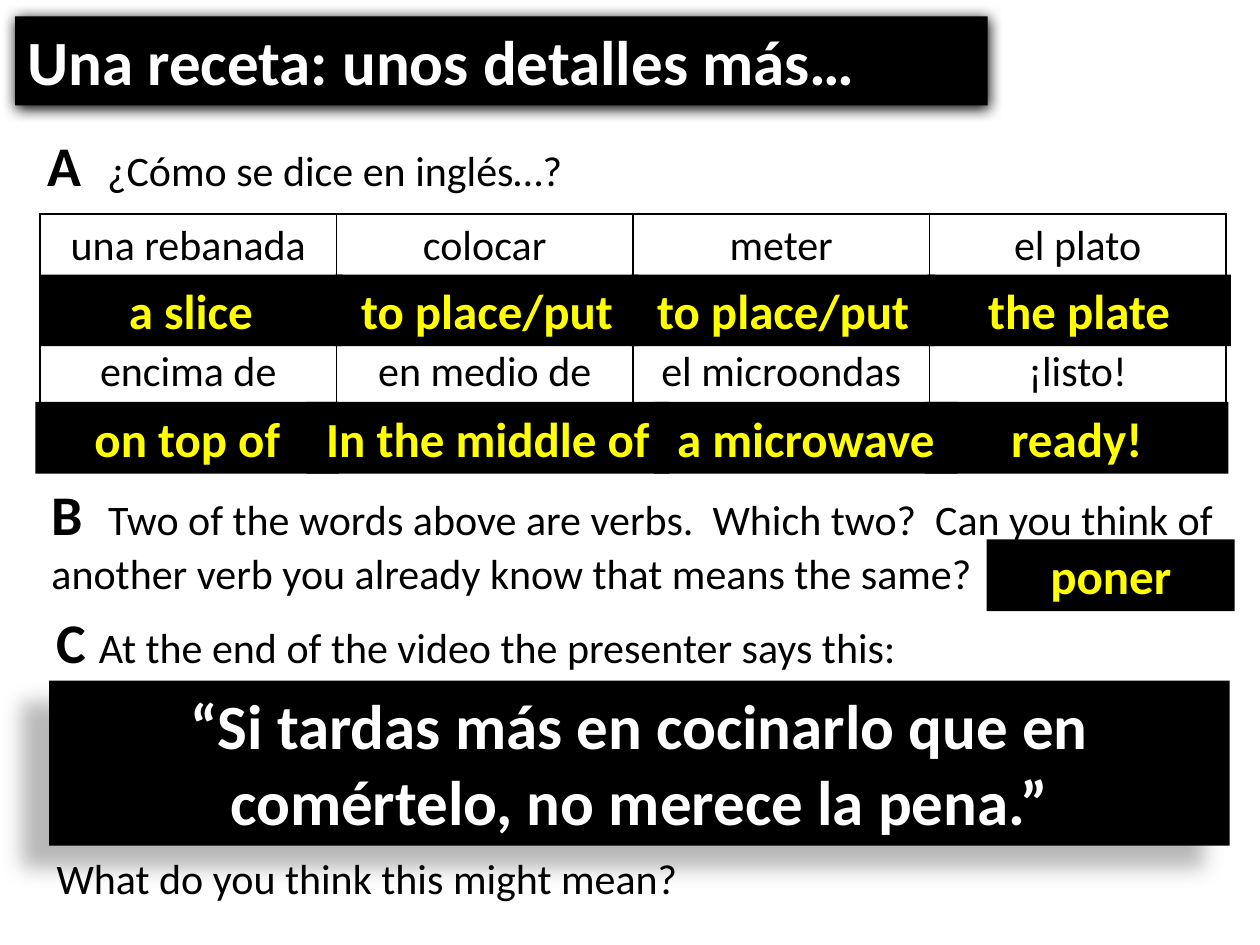
from lxml.etree import SubElement
from pptx import Presentation
from pptx.dml.color import RGBColor
from pptx.enum.shapes import MSO_SHAPE
from pptx.enum.text import MSO_ANCHOR, PP_ALIGN
from pptx.oxml.ns import qn
from pptx.util import Pt

BLACK = RGBColor(0x00, 0x00, 0x00)
WHITE = RGBColor(0xFF, 0xFF, 0xFF)
YELLOW = RGBColor(0xFF, 0xFF, 0x00)

LETTER = {"size": Pt(32), "bold": True, "color": BLACK}
BODY = {"size": Pt(24), "bold": False, "color": BLACK}
HEADLINE = {"size": Pt(36), "bold": True, "color": WHITE}
ANSWER = {"size": Pt(28), "bold": True, "color": YELLOW}

TITLE_SHADOW = {"alpha": 100, "blur": 8.5, "distance": 1, "angle": 90}
QUOTE_SHADOW = {"alpha": 28, "blur": 11.8, "distance": 19.7, "angle": 141}

VOCABULARY = [
    ["una rebanada", "colocar", "meter", "el plato"],
    [""] * 4,
    ["encima de", "en medio de", "el microondas", "¡listo!"],
    [""] * 4,
]
FIRST_ANSWERS = ["a slice", "to place/put", "to place/put", "the plate"]
SECOND_ANSWERS = [
    ("on top of", 20.2, 173.5),
    ("ready!", 528.5, 173.5),
    ("a microwave", 373.7, 173.5),
    ("In the middle of", 175, 207.4),
]


def write(paragraph, text, style):
    """Add a run of text in the given style."""
    run = paragraph.add_run()
    run.text = text
    run.font.name = "Calibri"
    for attribute, value in style.items():
        if attribute == "color":
            run.font.color.rgb = value
        else:
            setattr(run.font, attribute, value)


def add_shadow(panel, alpha, blur, distance, angle):
    """Give a panel an outer black shadow."""
    effects = panel._element.spPr.find(qn("a:effectLst"))
    outer = SubElement(
        effects, qn("a:outerShdw"), blurRad=str(Pt(blur)), dist=str(Pt(distance)),
        dir=str(angle * 60000), algn="ctr", rotWithShape="0")
    color = SubElement(outer, qn("a:srgbClr"), val=str(BLACK))
    SubElement(color, qn("a:alpha"), val=str(alpha * 1000))


def add_panel(slide, box, text, style, align=PP_ALIGN.CENTER, shadow=None):
    """Place a black rectangle with text in the box."""
    panel = slide.shapes.add_shape(MSO_SHAPE.RECTANGLE, *map(Pt, box))
    panel.shadow.inherit = False
    panel.fill.solid()
    panel.fill.fore_color.rgb = BLACK
    panel.line.fill.background()
    if shadow:
        add_shadow(panel, **shadow)
    frame = panel.text_frame
    frame.word_wrap = True
    frame.vertical_anchor = MSO_ANCHOR.TOP
    frame.paragraphs[0].alignment = align
    write(frame.paragraphs[0], text, style)


def add_task(slide, box, question, letter=""):
    """Place a question, led by its letter, in the box."""
    frame = slide.shapes.add_textbox(*map(Pt, box)).text_frame
    frame.word_wrap = True
    if letter:
        write(frame.paragraphs[0], letter, LETTER)
    write(frame.paragraphs[0], question, BODY)


def add_borders(cell):
    """Draw a thin black line on each side of a cell."""
    for side in ("a:lnL", "a:lnR", "a:lnT", "a:lnB"):
        border = SubElement(cell._tc.get_or_add_tcPr(), qn(side), w=str(Pt(1)))
        fill = SubElement(border, qn("a:solidFill"))
        SubElement(fill, qn("a:srgbClr"), val=str(BLACK))


def add_vocabulary(slide, box):
    """Place the table of Spanish words in the box."""
    rows, columns = len(VOCABULARY), len(VOCABULARY[0])
    table = slide.shapes.add_table(rows, columns, *map(Pt, box)).table
    table.first_row = table.horz_banding = False
    for row, words in enumerate(VOCABULARY):
        for column, word in enumerate(words):
            cell = table.cell(row, column)
            add_borders(cell)
            cell.fill.background()
            if word:
                paragraph = cell.text_frame.paragraphs[0]
                paragraph.alignment = PP_ALIGN.CENTER
                write(paragraph, word, BODY)


def add_answers(slide, box):
    """Cover the empty table rows with the English answers, within the box."""
    left, top, width, height = box
    step = (width - 173.5) / (len(FIRST_ANSWERS) - 1)
    for column, answer in enumerate(FIRST_ANSWERS):
        add_panel(slide, (left + column * step, top, 173.5, height), answer, ANSWER)
    for answer, answer_left, answer_width in SECOND_ANSWERS:
        add_panel(slide, (answer_left, top + 72.8, answer_width, height), answer, ANSWER)


def build():
    """Build and save the recipe slide."""
    deck = Presentation()
    deck.slide_width, deck.slide_height = Pt(720), Pt(540)
    slide = deck.slides.add_slide(deck.slide_layouts[6])
    add_panel(slide, (8.6, 9.3, 555.8, 51), "Una receta: unos detalles más…",
              HEADLINE, PP_ALIGN.LEFT, TITLE_SHADOW)
    add_task(slide, (20.2, 71.3, 680.4, 46), "¿Cómo se dice en inglés…?", "A  ")
    add_task(slide, (22.3, 270.7, 680.4, 75),
             "Two of the words above are verbs.  Which two?  Can you think of "
             "another verb you already know that means the same?", "B  ")
    add_task(slide, (25.2, 343.4, 680.4, 46),
             "At the end of the video the presenter says this:", "C ")
    add_panel(slide, (28.1, 388.9, 674.6, 94.4),
              "“Si tardas más en cocinarlo que en comértelo, no merece la pena.”",
              HEADLINE, shadow=QUOTE_SHADOW)
    add_task(slide, (25.2, 483.8, 680.4, 36), "What do you think this might mean?")
    add_vocabulary(slide, (22.9, 122.4, 677.6, 144))
    add_answers(slide, (22.3, 156.9, 681.1, 41))
    add_panel(slide, (563.8, 308.3, 141.8, 41), "poner", ANSWER)
    deck.save("out.pptx")


if __name__ == "__main__":
    build()
